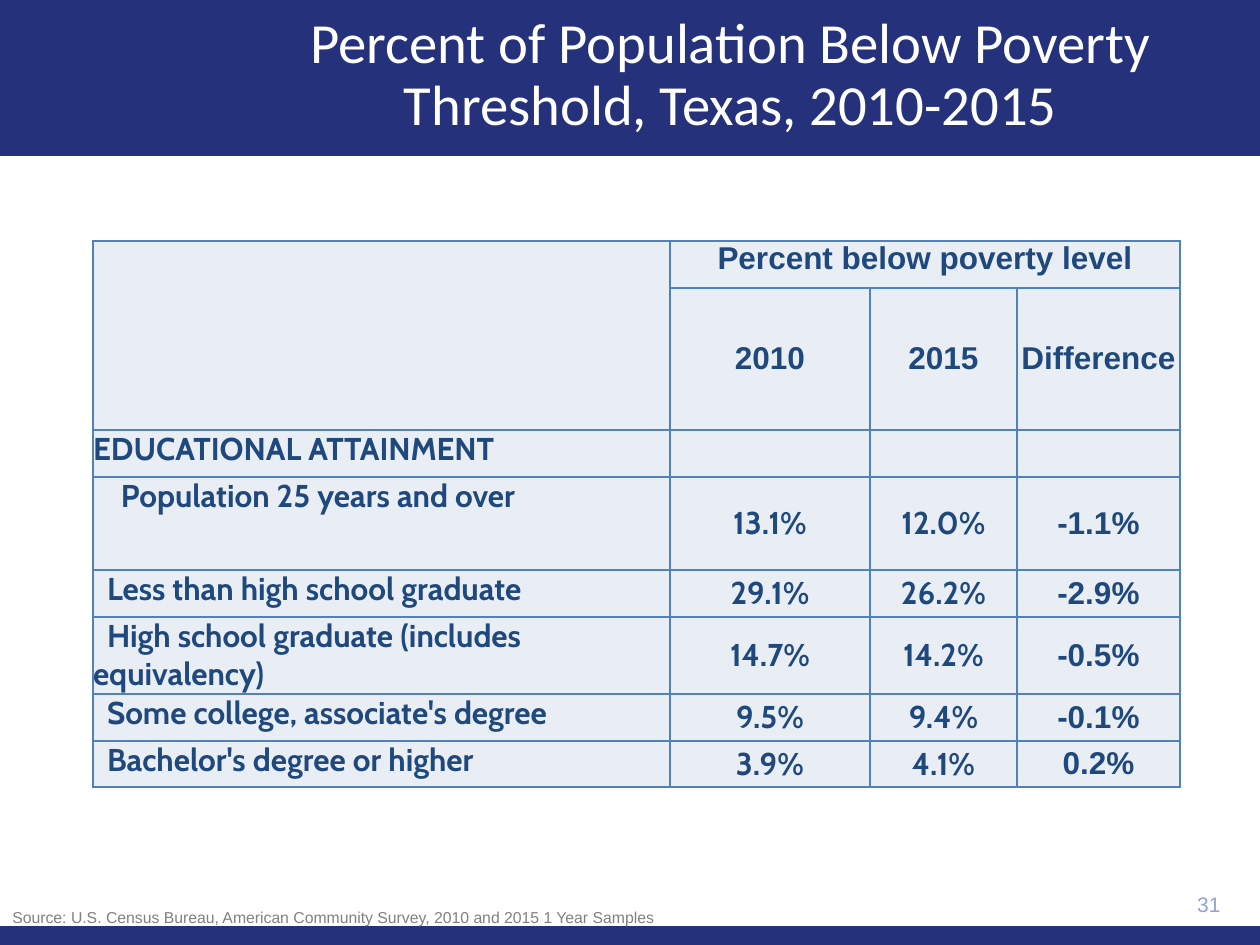
from lxml.etree import SubElement
from pptx import Presentation
from pptx.dml.color import RGBColor
from pptx.enum.shapes import MSO_SHAPE
from pptx.enum.text import MSO_ANCHOR, PP_ALIGN
from pptx.oxml.ns import qn
from pptx.util import Emu, Pt

COLORS = {
    "band": "25327B", "title": "FFFFFF", "cell": "E9EDF4", "border": "4F81BD",
    "table": "1F497D", "number": "8FA5D1", "source": "808080",
}
COL_WIDTHS = [577, 200, 147, 163]
ROW_HEIGHTS = [47, 142, 47, 93, 47, 77, 47, 46]
YEARS = ["2010", "2015", "Difference"]
SECTION = "EDUCATIONAL ATTAINMENT"
RATES = [
    ("Population 25 years and over", 28, "13.1%", "12.0%", "-1.1%"),
    ("Less than high school graduate", 14, "29.1%", "26.2%", "-2.9%"),
    ("High school graduate (includes equivalency)", 14, "14.7%", "14.2%", "-0.5%"),
    ("Some college, associate's degree", 14, "9.5%", "9.4%", "-0.1%"),
    ("Bachelor's degree or higher", 14, "3.9%", "4.1%", "0.2%"),
]


def px(n):
    """Turn px into EMU."""
    return Emu(round(n * 914400 / 126))


def color(name):
    """Look up a named colour."""
    return RGBColor.from_string(COLORS[name])


def write(tf, text, size=18, font="Arial", fill="table", bold=False,
          align=PP_ALIGN.LEFT, spacing=None, indent=0):
    """Write one formatted paragraph into a text frame."""
    tf.word_wrap = True
    p = tf.paragraphs[0]
    p.alignment = align
    if spacing:
        p.line_spacing = spacing
    if indent:
        p._p.get_or_add_pPr().set("indent", str(px(indent)))
    r = p.add_run()
    r.text = text
    r.font.size, r.font.name, r.font.bold = Pt(size), font, bold
    r.font.color.rgb = color(fill)


def add_band(s, x, y, w, h):
    """Place a plain band behind the other parts of the slide."""
    sp = s.shapes.add_shape(MSO_SHAPE.RECTANGLE, px(x), px(y), px(w), px(h))
    sp.shadow.inherit = False
    sp.fill.solid()
    sp.fill.fore_color.rgb = color("band")
    sp.line.fill.background()
    s.shapes._spTree.insert(2, sp._element)


def add_title(s, x, y, w, h):
    """Place the title placeholder over the top band."""
    sp = s.shapes.title
    sp.left, sp.top, sp.width, sp.height = px(x), px(y), px(w), px(h)
    sp.text_frame.vertical_anchor = MSO_ANCHOR.MIDDLE
    write(sp.text_frame, "Percent of Population Below Poverty Threshold, Texas, 2010-2015",
          size=32.4, font="Calibri", fill="title", align=PP_ALIGN.CENTER, spacing=0.9)


def add_label(s, x, y, w, h, text, anchor=MSO_ANCHOR.TOP, **fmt):
    """Place a text box with one formatted paragraph."""
    tf = s.shapes.add_textbox(px(x), px(y), px(w), px(h)).text_frame
    tf.vertical_anchor = anchor
    write(tf, text, **fmt)


def style_cell(cell):
    """Give a cell its borders, fill and zero margins."""
    cell.margin_left = cell.margin_right = cell.margin_top = cell.margin_bottom = 0
    tc_pr = cell._tc.get_or_add_tcPr()
    for side in ("a:lnL", "a:lnR", "a:lnT", "a:lnB"):
        ln = SubElement(tc_pr, qn(side), w=str(Pt(1)))
        SubElement(SubElement(ln, qn("a:solidFill")), qn("a:srgbClr"), val=COLORS["border"])
    cell.fill.solid()
    cell.fill.fore_color.rgb = color("cell")


def write_value(cell, text, font="Arial"):
    """Write a centred bold value into a cell."""
    cell.vertical_anchor = MSO_ANCHOR.MIDDLE
    write(cell.text_frame, text, font=font, bold=True, align=PP_ALIGN.CENTER)


def add_poverty_table(s, x, y):
    """Place the poverty table with its top left corner at x, y."""
    table = s.shapes.add_table(len(ROW_HEIGHTS), len(COL_WIDTHS), px(x), px(y),
                               px(sum(COL_WIDTHS)), px(sum(ROW_HEIGHTS))).table
    table.first_row = table.horz_banding = False
    for col, w in zip(table.columns, COL_WIDTHS):
        col.width = px(w)
    for row, h in zip(table.rows, ROW_HEIGHTS):
        row.height = px(h)
    for cell in table.iter_cells():
        style_cell(cell)
    table.cell(0, 0).merge(table.cell(1, 0))
    table.cell(0, 1).merge(table.cell(0, 3))
    write(table.cell(0, 1).text_frame, "Percent below poverty level", bold=True,
          align=PP_ALIGN.CENTER)
    for c, year in enumerate(YEARS, 1):
        write_value(table.cell(1, c), year)
    write(table.cell(2, 0).text_frame, SECTION, font="Cabin", bold=True)
    for i, (group, indent, *values) in enumerate(RATES, 3):
        write(table.cell(i, 0).text_frame, group, font="Cabin", bold=True, indent=indent)
        for c, (value, font) in enumerate(zip(values, ("Cabin", "Cabin", "Arial")), 1):
            write_value(table.cell(i, c), value, font)


def main():
    """Build and save the slide."""
    prs = Presentation()
    prs.slide_width, prs.slide_height = px(1260), px(945)
    s = prs.slides.add_slide(prs.slide_layouts[5])
    add_band(s, 0, 0, 1260, 156)
    add_band(s, 0, 926, 1260, 19)
    add_title(s, 214, 13, 1033, 126)
    add_poverty_table(s, 93, 241)
    add_label(s, 1121, 883, 112, 43, "31", anchor=MSO_ANCHOR.MIDDLE, size=12,
              fill="number", align=PP_ALIGN.RIGHT)
    add_label(s, 0, 900, 882, 33,
              "Source: U.S. Census Bureau, American Community Survey, 2010 and 2015 1 Year Samples",
              size=9, fill="source", spacing=1.07)
    prs.save("out.pptx")


if __name__ == "__main__":
    main()
